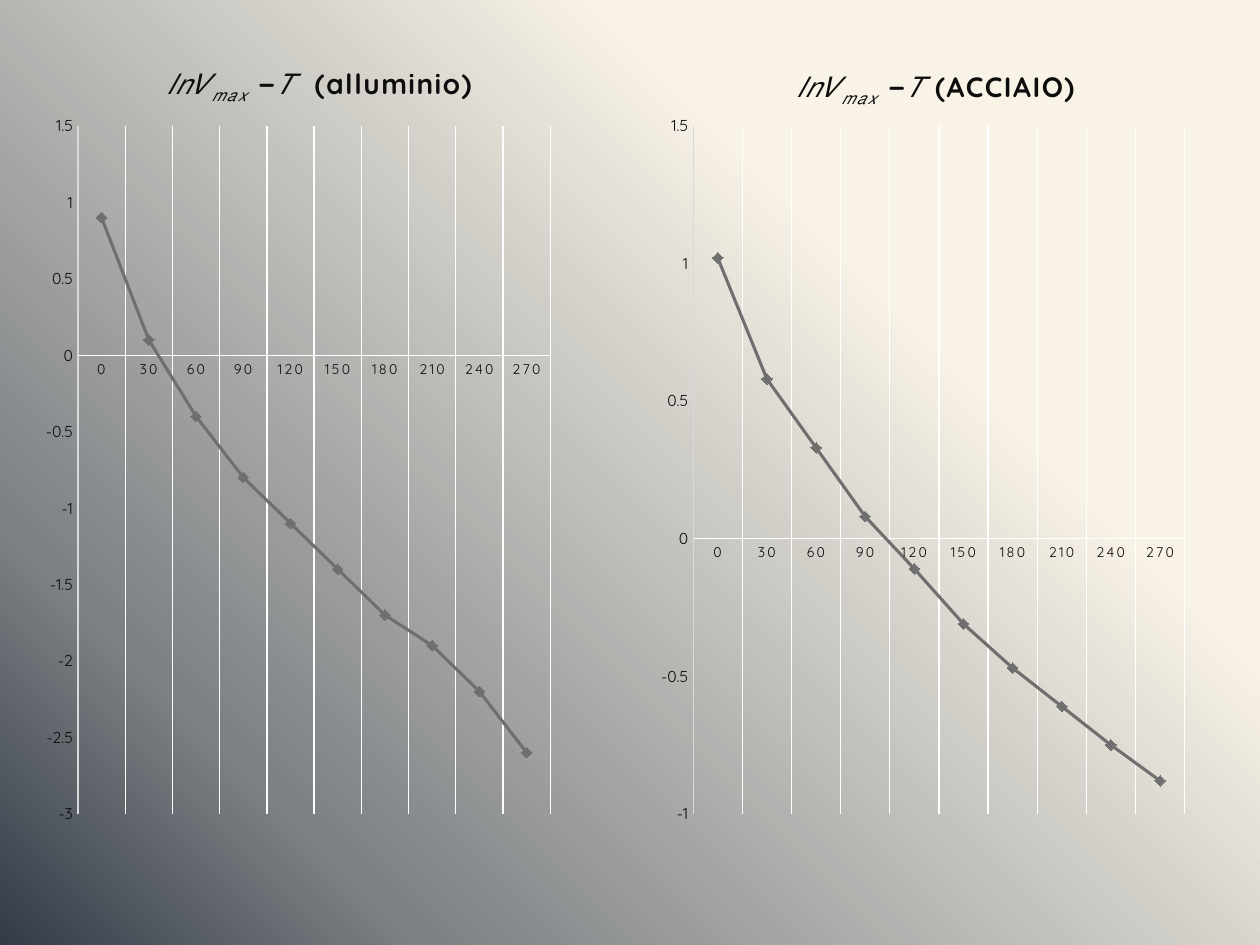
from copy import deepcopy

from lxml import etree
from pptx import Presentation
from pptx.chart.data import CategoryChartData
from pptx.dml.color import RGBColor
from pptx.enum.chart import XL_CHART_TYPE as ChartType
from pptx.enum.chart import XL_MARKER_STYLE as Marker
from pptx.enum.chart import XL_TICK_MARK as TickMark
from pptx.oxml.ns import qn
from pptx.util import Inches, Pt

CREAM = RGBColor(0xF8, 0xF2, 0xE7)
SLATE = RGBColor(0x7C, 0x80, 0x84)
NAVY = RGBColor(0x33, 0x3B, 0x46)
WHITE = RGBColor(0xFF, 0xFF, 0xFF)
INK = RGBColor(0x0D, 0x0D, 0x0D)
PALE = RGBColor(0xD9, 0xD9, 0xD9)
GRAY = RGBColor(0x6F, 0x6F, 0x6F)
FONT = "Quicksand"
TOP, HEIGHT = 0.21, 6.47
PLOT_TOP, PLOT_HEIGHT = 1.0, 5.46
TEMPERATURES = [str(degrees) for degrees in range(0, 300, 30)]
ALUMINIUM = [0.9, 0.1, -0.4, -0.8, -1.1, -1.4, -1.7, -1.9, -2.2, -2.6]
STEEL = [1.02, 0.58, 0.33, 0.08, -0.11, -0.31, -0.47, -0.61, -0.75, -0.88]


def paint_background(page):
    fill = page.background.fill
    fill.gradient()
    fill.gradient_angle = 225
    stop_list = page._element.find(".//" + qn("a:gsLst"))
    stop_list.append(deepcopy(stop_list[-1]))
    colors = [(0.3, CREAM), (0.81, SLATE), (1, NAVY)]
    for stop, (position, color) in zip(fill.gradient_stops, colors):
        stop.position = position
        stop.color.rgb = color


def style_font(font, size, color=INK, bold=False, italic=False):
    font.name = FONT
    font.size = Pt(size)
    font.bold = bold
    font.italic = italic
    font.color.rgb = color


def style_line(line, color, width=0.75):
    line.color.rgb = color
    line.width = Pt(width)


def set_layout(parent, index, **values):
    for old in parent.findall(qn("c:layout")):
        parent.remove(old)
    layout = etree.Element(qn("c:layout"))
    manual = etree.SubElement(layout, qn("c:manualLayout"))
    for name, value in values.items():
        etree.SubElement(manual, qn(f"c:{name}")).set("val", str(value))
    parent.insert(index, layout)


def add_title(chart, material, x, y):
    para = chart.chart_title.text_frame.paragraphs[0]
    pieces = [
        ("𝑙𝑛𝑉", False, False),
        ("𝑚𝑎𝑥", False, True),
        (" −", True, False),
        ("𝑇", False, False),
        (material, True, False),
    ]
    for text, bold, subscript in pieces:
        span = para.add_run()
        span.text = text
        style_font(span.font, 16, bold=bold, italic=not bold)
        properties = span._r.get_or_add_rPr()
        properties.set("spc", "100")
        if subscript:
            properties.set("baseline", "-25000")
    chart.chart_title.include_in_layout = False
    set_layout(chart.chart_title._element, 1, xMode="edge", yMode="edge",
               x=round(x, 3), y=round(y, 3))


def style_axis(axis, size, color):
    axis.major_tick_mark = TickMark.NONE
    axis.minor_tick_mark = TickMark.NONE
    style_font(axis.tick_labels.font, size)
    style_line(axis.format.line, color)


def add_line_chart(page, left, width, plot_left, plot_width, material,
                   title_left, title_top, values, minimum):
    data = CategoryChartData()
    data.categories = TEMPERATURES
    data.add_series("Series 1", values)
    chart = page.shapes.add_chart(
        ChartType.LINE_MARKERS, Inches(left), Inches(TOP),
        Inches(width), Inches(HEIGHT), data).chart
    style_font(chart.font, 10, WHITE)
    chart.has_legend = False
    add_title(chart, material, (title_left - left) / width,
              (title_top - TOP) / HEIGHT)

    categories = chart.category_axis
    style_axis(categories, 8, WHITE)
    labels = categories._element.find(".//" + qn("a:defRPr"))
    labels.set("spc", "120")
    categories.has_major_gridlines = True
    style_line(categories.major_gridlines.format.line, WHITE)

    scale = chart.value_axis
    style_axis(scale, 9, PALE)
    scale.has_major_gridlines = False
    scale.minimum_scale, scale.maximum_scale = minimum, 1.5
    scale.major_unit = 0.5
    scale.tick_labels.number_format = "General"
    scale.tick_labels.number_format_is_linked = False

    chart.plots[0].vary_by_categories = False
    series = chart.plots[0].series[0]
    series.smooth = False
    style_line(series.format.line, GRAY, 1.75)
    series.marker.style = Marker.DIAMOND
    series.marker.size = 6
    series.marker.format.fill.solid()
    series.marker.format.fill.fore_color.rgb = GRAY
    series.marker.format.line.color.rgb = GRAY

    plot_area = chart._chartSpace.find(".//" + qn("c:plotArea"))
    set_layout(plot_area, 0, layoutTarget="inner", xMode="edge", yMode="edge",
               x=round((plot_left - left) / width, 3),
               y=round((PLOT_TOP - TOP) / HEIGHT, 3),
               w=round(plot_width / width, 3),
               h=round(PLOT_HEIGHT / HEIGHT, 3))


def main():
    deck = Presentation()
    deck.slide_width, deck.slide_height = Inches(10), Inches(7.5)
    page = deck.slides.add_slide(deck.slide_layouts[6])
    paint_background(page)
    add_line_chart(page, 0.28, 4.18, 0.62, 3.75, "  (alluminio)",
                   1.3, 0.48, ALUMINIUM, -3)
    add_line_chart(page, 5.16, 4.33, 5.5, 3.9, " (ACCIAIO)",
                   6.3, 0.5, STEEL, -1)
    deck.save("out.pptx")


if __name__ == "__main__":
    main()
